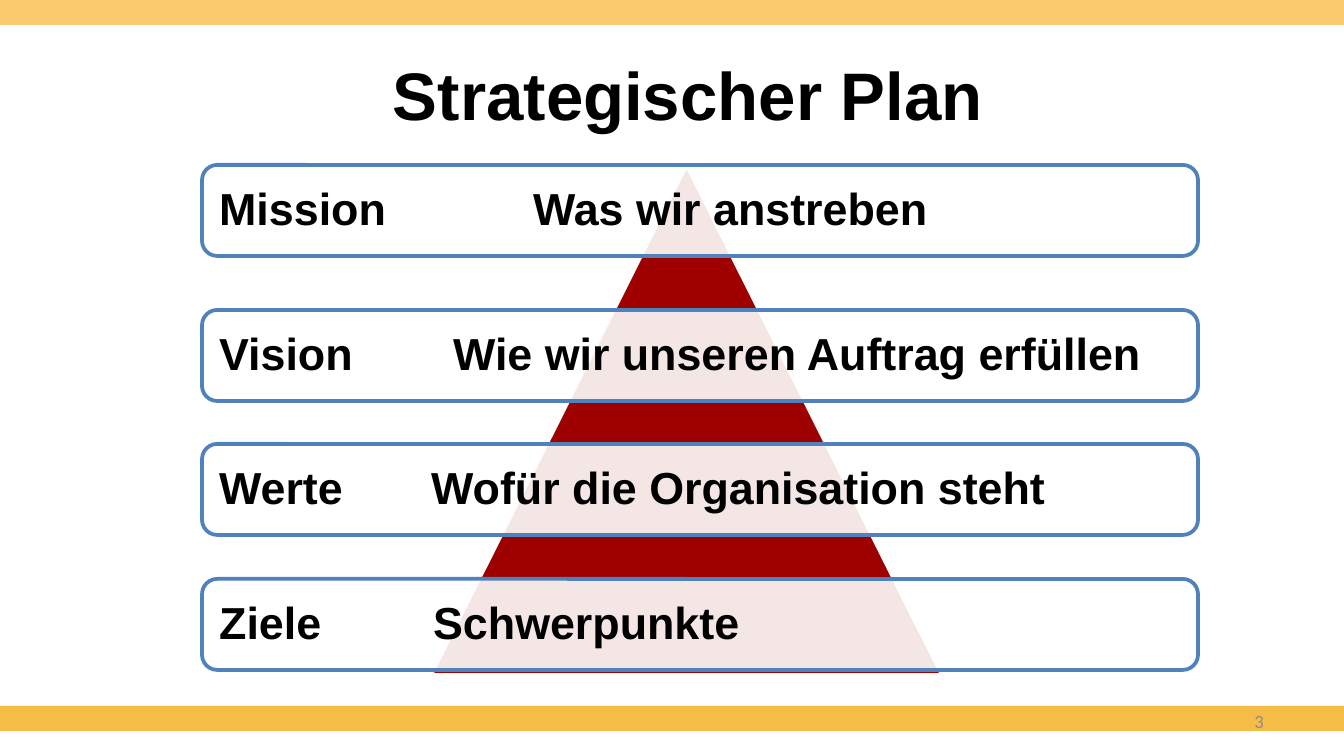
from lxml.etree import SubElement
from pptx import Presentation
from pptx.dml.color import RGBColor
from pptx.enum.shapes import MSO_SHAPE as Shape
from pptx.enum.text import MSO_ANCHOR as Anchor, PP_ALIGN as Align
from pptx.oxml.ns import qn
from pptx.util import Pt

EMU_PER_PX = 914400 / 134.4

BLACK = RGBColor(0x00, 0x00, 0x00)
WHITE = RGBColor(0xFF, 0xFF, 0xFF)
GREY = RGBColor(0x8C, 0x8C, 0x8C)
RED = RGBColor(0x9E, 0x00, 0x00)
BLUE = RGBColor(0x4F, 0x81, 0xBD)
LIGHT_ORANGE = RGBColor(0xFA, 0xCA, 0x6E)
ORANGE = RGBColor(0xF5, 0xBD, 0x47)

# Top, term, explanation, tab stop of the explanation
LEVELS = [
    (165, "Mission", "Was wir anstreben", 314),
    (310, "Vision", "Wie wir unseren Auftrag erfüllen", 234),
    (444, "Werte", "Wofür die Organisation steht", 212),
    (579, "Ziele", "Schwerpunkte", 214),
]
LEVEL_LEFT, LEVEL_WIDTH, LEVEL_HEIGHT, LEVEL_MARGIN = 202, 996, 91, 4


def px(length):
    return round(length * EMU_PER_PX)


def add_box(slide, kind, box, fill, line=None, opacity=None):
    shape = slide.shapes.add_shape(kind, *map(px, box))
    shape.shadow.inherit = False
    shape.fill.solid()
    shape.fill.fore_color.rgb = fill
    if opacity is not None:
        color = shape.fill._xPr.find(qn("a:solidFill"))[0]
        SubElement(color, qn("a:alpha"), val=str(opacity * 1000))
    if line is None:
        shape.line.fill.background()
    else:
        shape.line.color.rgb = line
        shape.line.width = Pt(2)


def add_text(slide, text, box, *, size, font="Arial", color=BLACK, bold=True,
             align=Align.LEFT, spacing=None, tab=None):
    frame = slide.shapes.add_textbox(*map(px, box)).text_frame
    frame.word_wrap = True
    frame.vertical_anchor = Anchor.MIDDLE
    paragraph = frame.paragraphs[0]
    if tab is not None:
        tabs = SubElement(paragraph._p.get_or_add_pPr(), qn("a:tabLst"))
        SubElement(tabs, qn("a:tab"), pos=str(px(tab)), algn="l")
    paragraph.alignment = align
    if spacing is not None:
        paragraph.line_spacing = spacing
    run = paragraph.add_run()
    run.text = text
    run.font.name = font
    run.font.size = Pt(size)
    run.font.bold = bold
    run.font.color.rgb = color


def add_level(slide, top, term, explanation, tab):
    add_box(slide, Shape.ROUNDED_RECTANGLE,
            (LEVEL_LEFT, top, LEVEL_WIDTH, LEVEL_HEIGHT),
            WHITE, line=BLUE, opacity=90)
    inner = (LEVEL_LEFT + LEVEL_MARGIN, top + LEVEL_MARGIN,
             LEVEL_WIDTH - 2 * LEVEL_MARGIN, LEVEL_HEIGHT - 2 * LEVEL_MARGIN)
    add_text(slide, f"{term}\t{explanation}", inner,
             size=24, spacing=0.9, tab=tab)


def main():
    deck = Presentation()
    deck.slide_width, deck.slide_height = px(1344), px(756)
    slide = deck.slides.add_slide(deck.slide_layouts[6])

    # Bands and title
    add_box(slide, Shape.RECTANGLE, (0, 706, 1344, 25), ORANGE)
    add_box(slide, Shape.RECTANGLE, (0, 0, 1344, 25), LIGHT_ORANGE)
    add_text(slide, "Strategischer Plan", (100, 31, 1176, 126),
             size=36, align=Align.CENTER)

    # Pyramid with its levels
    add_box(slide, Shape.ISOSCELES_TRIANGLE, (431, 165, 511, 510),
            RED, line=WHITE)
    for level in LEVELS:
        add_level(slide, *level)

    # Page number
    add_text(slide, "3", (964, 701, 313, 40), size=10, font="Calibri",
             color=GREY, bold=False, align=Align.RIGHT)

    deck.save("out.pptx")


if __name__ == "__main__":
    main()
